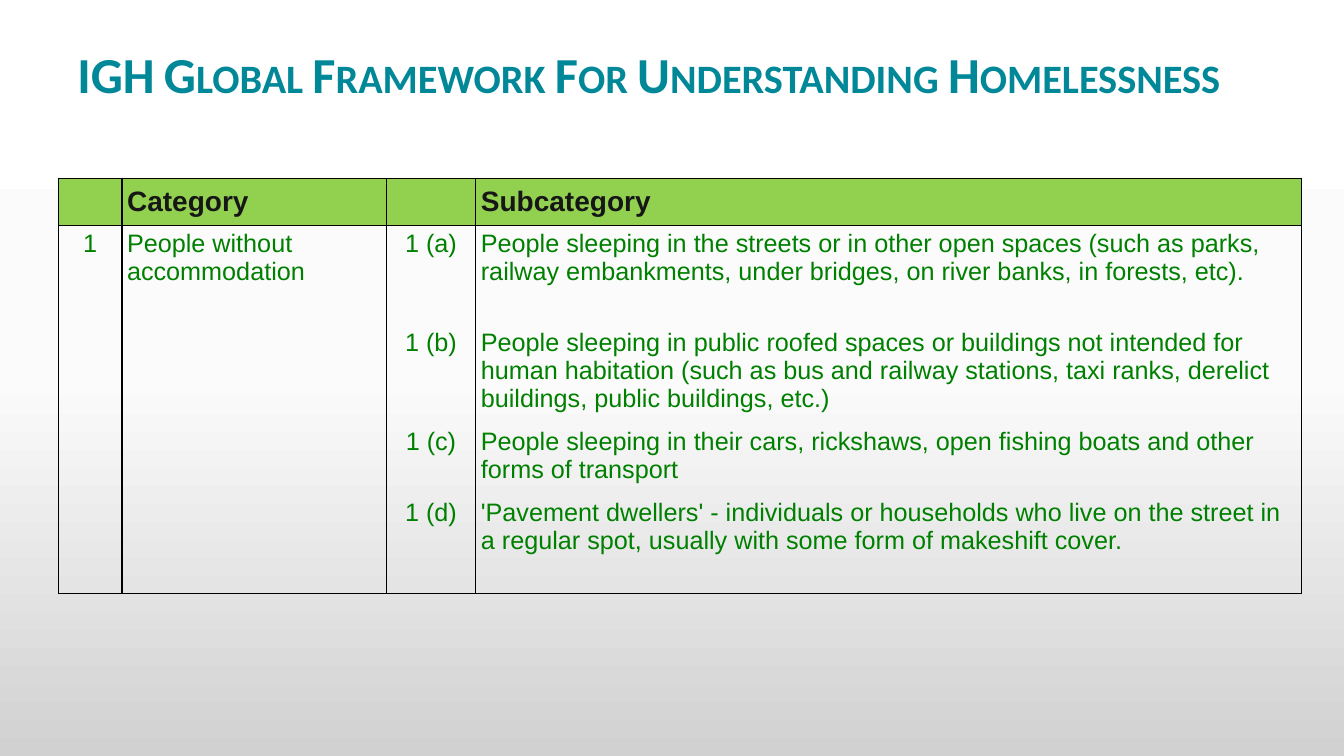
from lxml.etree import SubElement
from copy import deepcopy
from pptx import Presentation
from pptx.dml.color import RGBColor
from pptx.enum.text import MSO_ANCHOR, PP_ALIGN
from pptx.oxml.ns import qn
from pptx.util import Inches, Pt

COLORS = {
    "title": "008899", "header_fill": "92D050", "header_text": "171616",
    "body_text": "008000", "border": "000000",
}
BACKGROUND = [(0, "FFFFFF"), (0.5, "FBFBFB"), (1, "D1D1D1")]
TITLE = "IGH Global Framework For Understanding Homelessness"
COL_WIDTHS = [0.63, 2.62, 0.89, 8.19]
ROW_HEIGHTS = [0.47, 0.98, 0.98, 0.71, 0.98]
ROWS = [
    ("", "Category", "", "Subcategory"),
    ("1", "People without accommodation", "1 (a)",
     "People sleeping in the streets or in other open spaces (such as parks, "
     "railway embankments, under bridges, on river banks, in forests, etc)."),
    ("", "", "1 (b)",
     "People sleeping in public roofed spaces or buildings not intended for "
     "human habitation (such as bus and railway stations, taxi ranks, derelict "
     "buildings, public buildings, etc.)"),
    ("", "", "1 (c)",
     "People sleeping in their cars, rickshaws, open fishing boats and other "
     "forms of transport"),
    ("", "", "1 (d)",
     "'Pavement dwellers' - individuals or households who live on the street in "
     "a regular spot, usually with some form of makeshift cover."),
]


def rgb(name):
    return RGBColor.from_string(COLORS[name])


def format_run(r, font, size, color, bold):
    r.font.name, r.font.size, r.font.bold = font, Pt(size), bold
    r.font.color.rgb = rgb(color)


def paint_background(slide):
    fill = slide.background.fill
    fill.gradient()
    fill.gradient_angle = 270
    stop_list = slide.element.find(".//" + qn("a:gsLst"))
    stop_list.insert(1, deepcopy(stop_list[0]))
    for stop, (position, color) in zip(fill.gradient_stops, BACKGROUND):
        stop.position = position
        stop.color.rgb = RGBColor.from_string(color)


def add_title(slide, left, top, width, height):
    tf = slide.shapes.add_textbox(left, top, width, height).text_frame
    tf.word_wrap = True
    tf.vertical_anchor = MSO_ANCHOR.MIDDLE
    p = tf.paragraphs[0]
    p.text = TITLE
    p.line_spacing = 0.9
    r = p.runs[0]
    format_run(r, "Calibri", 36, "title", True)
    r.font._element.set("cap", "small")


def set_borders(cell, sides):
    """Draw the given sides (letters of LRTB) and clear the others."""
    tc_pr = cell._tc.get_or_add_tcPr()
    for side in "LRTB":
        ln = SubElement(tc_pr, qn("a:ln" + side), w=str(Pt(1)))
        if side in sides:
            fill = SubElement(ln, qn("a:solidFill"))
            SubElement(fill, qn("a:srgbClr"), val=COLORS["border"])
        else:
            SubElement(ln, qn("a:noFill"))


def fill_cell(cell, text, header, centred):
    cell.margin_left = cell.margin_right = Inches(0.05)
    cell.margin_top = cell.margin_bottom = Inches(0.04)
    cell.vertical_anchor = MSO_ANCHOR.MIDDLE if header else MSO_ANCHOR.TOP
    if header:
        cell.fill.solid()
        cell.fill.fore_color.rgb = rgb("header_fill")
    else:
        cell.fill.background()
    if not text:
        return
    p = cell.text_frame.paragraphs[0]
    p.text = text
    p.alignment = PP_ALIGN.CENTER if centred else PP_ALIGN.LEFT
    size, color = (20, "header_text") if header else (18, "body_text")
    format_run(p.runs[0], "Arial", size, color, header)


def add_category_table(slide, left, top, width, height):
    table = slide.shapes.add_table(len(ROWS), len(COL_WIDTHS),
                                   left, top, width, height).table
    table.first_row = table.horz_banding = False
    for column, share in zip(table.columns, COL_WIDTHS):
        column.width = int(width * share / sum(COL_WIDTHS))
    for row, share in zip(table.rows, ROW_HEIGHTS):
        row.height = int(height * share / sum(ROW_HEIGHTS))
    last = len(ROWS) - 1
    for j in (0, 1):
        table.cell(1, j).merge(table.cell(last, j))
    for i, texts in enumerate(ROWS):
        for j, text in enumerate(texts):
            cell = table.cell(i, j)
            sides = "LR"
            if i <= 1:
                sides += "T"
            if i in (0, last) or cell.is_merge_origin:
                sides += "B"
            set_borders(cell, sides)
            fill_cell(cell, text, header=i == 0, centred=j % 2 == 0)


def main():
    prs = Presentation()
    prs.slide_width, prs.slide_height = Inches(13.33), Inches(7.5)
    slide = prs.slides.add_slide(prs.slide_layouts[6])
    paint_background(slide)
    add_title(slide, Inches(0.67), Inches(0.43), Inches(12), Inches(0.67))
    add_category_table(slide, Inches(0.58), Inches(1.77),
                       Inches(sum(COL_WIDTHS)), Inches(sum(ROW_HEIGHTS)))
    prs.save("out.pptx")


if __name__ == "__main__":
    main()
